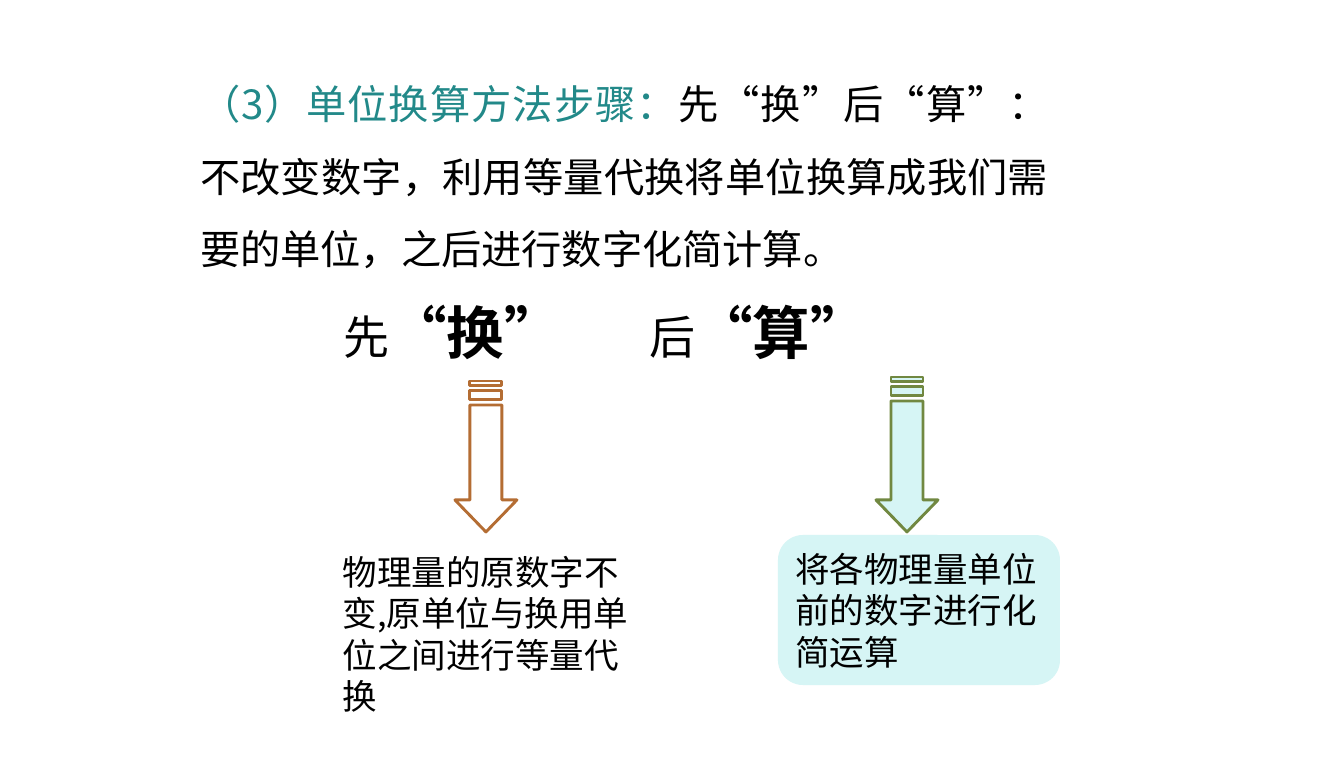
from dataclasses import dataclass

from lxml.etree import SubElement
from pptx import Presentation
from pptx.dml.color import RGBColor as RGB
from pptx.enum.lang import MSO_LANGUAGE_ID as LANG
from pptx.enum.shapes import MSO_SHAPE as SHAPE
from pptx.enum.text import MSO_ANCHOR as ANCHOR, PP_ALIGN as ALIGN
from pptx.oxml.ns import qn
from pptx.util import Pt

PX = 8835


@dataclass(frozen=True)
class Theme:
    font: str = "Noto Sans CJK SC"
    ink: RGB = RGB(0x00, 0x00, 0x00)
    teal: RGB = RGB(0x22, 0x89, 0x89)
    white: RGB = RGB(0xFF, 0xFF, 0xFF)
    mint: RGB = RGB(0xD6, 0xF5, 0xF5)
    brown: RGB = RGB(0xB4, 0x6D, 0x33)
    green: RGB = RGB(0x71, 0x88, 0x41)
    note: int = 24
    body: int = 28
    step: int = 32
    keyword: int = 40
    gap: int = 54
    outline: int = 2


class Board:
    def __init__(self, slide, theme):
        self.slide, self.theme = slide, theme

    def fill_paragraph(self, paragraph, runs, size, align=ALIGN.LEFT):
        paragraph.alignment = align
        font = paragraph.font
        font.name, font.size = self.theme.font, Pt(size)
        font.color.rgb = self.theme.ink
        defaults = paragraph._p.pPr.find(qn("a:defRPr"))
        SubElement(defaults, qn("a:ea"), typeface=self.theme.font)
        for words, style in runs:
            run = paragraph.add_run()
            run.text = words
            run.font.language_id = LANG.SIMPLIFIED_CHINESE
            if "size" in style:
                run.font.size = Pt(style["size"])
            if "bold" in style:
                run.font.bold = style["bold"]
            if "color" in style:
                run.font.color.rgb = style["color"]

    def text(self, box, runs, size, align=ALIGN.LEFT, spacing=None, tab=None):
        frame = self.slide.shapes.add_textbox(*(v * PX for v in box)).text_frame
        frame.word_wrap = True
        paragraph = frame.paragraphs[0]
        self.fill_paragraph(paragraph, runs, size, align)
        if spacing:
            paragraph.line_spacing = spacing
        if tab:
            stops = paragraph._p.pPr.makeelement(qn("a:tabLst"))
            SubElement(stops, qn("a:tab"), pos=str(tab * PX), algn="l")
            paragraph._p.pPr.find(qn("a:defRPr")).addprevious(stops)

    def card(self, kind, box, fill, words):
        card = self.slide.shapes.add_shape(kind, *(v * PX for v in box))
        card.shadow.inherit = False
        card.fill.solid()
        card.fill.fore_color.rgb = fill
        card.line.fill.background()
        frame = card.text_frame
        frame.word_wrap = True
        frame.vertical_anchor = ANCHOR.MIDDLE
        self.fill_paragraph(frame.paragraphs[0], [(words, {})], self.theme.note)

    def striped_arrow(self, center, top, fill, line):
        shaft, head, shoulder, tip = 16, 31, 500, 532
        left, right = center - shaft, center + shaft
        body = top + 24
        contours = [[(left, body), (right, body), (right, shoulder),
                     (center + head, shoulder), (center, tip),
                     (center - head, shoulder), (left, shoulder)]]
        for start, end in ((10, 19), (0, 5)):
            contours.append([(left, top + start), (right, top + start),
                             (right, top + end), (left, top + end)])
        builder = self.slide.shapes.build_freeform(*contours[0][0], scale=PX)
        for index, (first, *rest) in enumerate(contours):
            if index:
                builder.move_to(*first)
            builder.add_line_segments(rest, close=True)
        arrow = builder.convert_to_shape()
        arrow.shadow.inherit = False
        arrow.fill.solid()
        arrow.fill.fore_color.rgb = fill
        arrow.line.color.rgb = line
        arrow.line.width = Pt(self.theme.outline)


def main():
    deck = Presentation()
    deck.slide_width, deck.slide_height = 1344 * PX, 774 * PX
    theme = Theme()
    board = Board(deck.slides.add_slide(deck.slide_layouts[6]), theme)
    keyword = {"size": theme.keyword, "bold": True}

    board.text((190, 50, 869, 230), [
        ("（3）单位换算方法步骤：", {"color": theme.teal}),
        ("先“换”后“算”：不改变数字，利用等量代换将单位换算成我们需要的单位，"
         "之后进行数字化简计算。", {}),
    ], theme.body, ALIGN.JUSTIFY, spacing=1.5)
    board.text((333, 272, 643, 105), [
        ("先", {}), ("“换”", keyword), ("\t", {"size": theme.gap}),
        ("后", {}), ("“算”", keyword),
    ], theme.step, tab=306)
    board.striped_arrow(486, 381, theme.white, theme.brown)
    board.card(SHAPE.FLOWCHART_ALTERNATE_PROCESS, (323, 535, 346, 197),
               theme.white, "物理量的原数字不变,原单位与换用单位之间进行等量代换")
    board.card(SHAPE.ROUNDED_RECTANGLE, (778, 535, 282, 150),
               theme.mint, "将各物理量单位前的数字进行化简运算")
    board.striped_arrow(907, 377, theme.mint, theme.green)
    deck.save("out.pptx")


if __name__ == "__main__":
    main()
